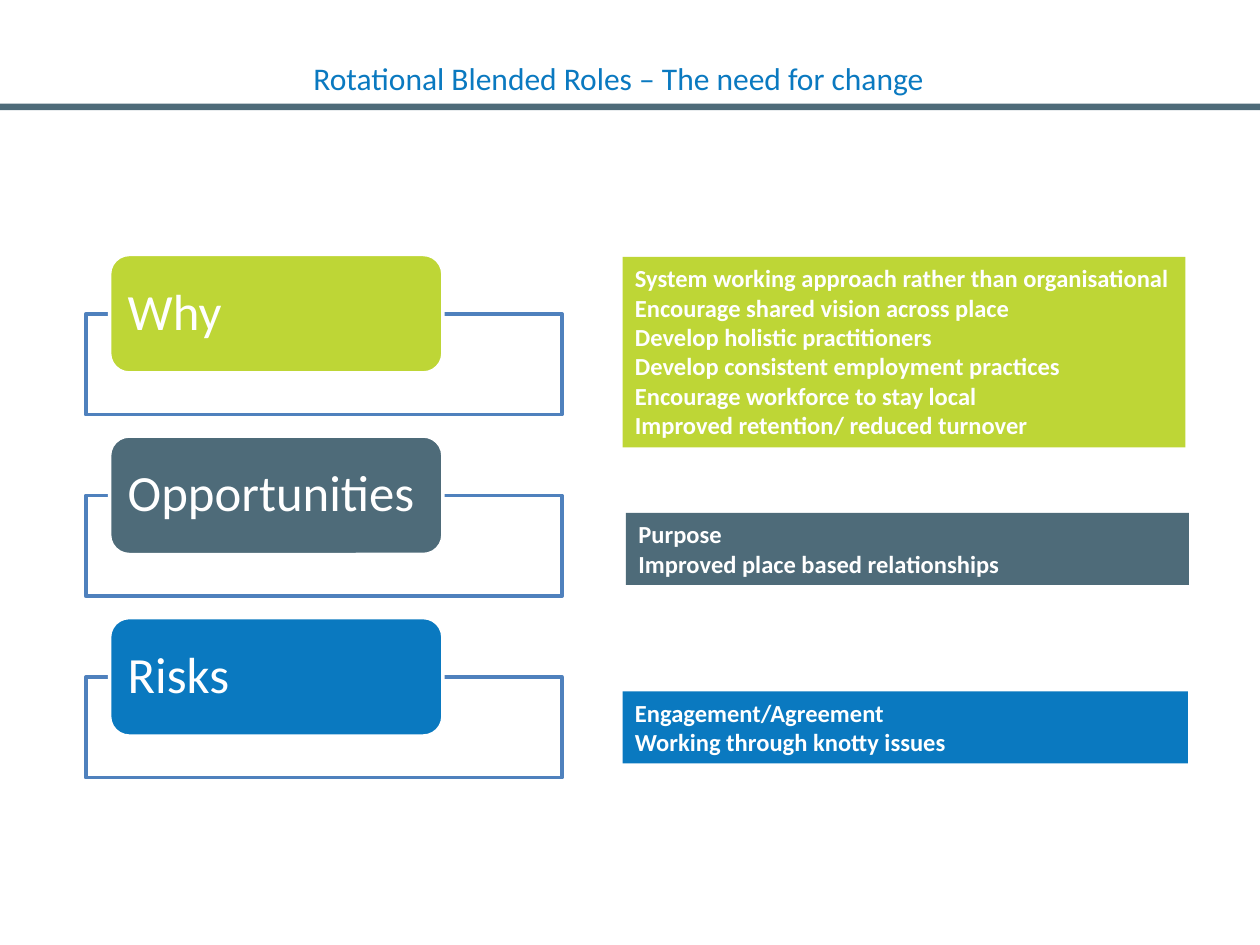
import pptx
import pptx.util
import pptx.dml.color
import pptx.enum.shapes
import pptx.enum.text
import pptx.oxml.ns
import lxml.etree

Cm = pptx.util.Cm
Pt = pptx.util.Pt
RGBColor = pptx.dml.color.RGBColor
Shape = pptx.enum.shapes.MSO_SHAPE
Align = pptx.enum.text.PP_ALIGN
Anchor = pptx.enum.text.MSO_ANCHOR

WHITE = RGBColor(0xFF, 0xFF, 0xFF)
LIME = RGBColor(0xBE, 0xD6, 0x36)
SLATE = RGBColor(0x4E, 0x6B, 0x79)
BLUE = RGBColor(0x0A, 0x79, 0xC0)
OUTLINE = RGBColor(0x4F, 0x81, 0xBD)

STAGES = [("Why", LIME), ("Opportunities", SLATE), ("Risks", BLUE)]
PANELS = [
    ((12.55, 5.18, 11.35, 3.84), LIME, Align.JUSTIFY, [
        "System working approach rather than organisational",
        "Encourage shared vision across place",
        "Develop holistic practitioners",
        "Develop consistent employment practices",
        "Encourage workforce to stay local",
        "Improved retention/ reduced turnover",
    ]),
    ((12.62, 10.34, 11.35, 1.45), SLATE, Align.LEFT, [
        "Purpose",
        "Improved place based relationships",
    ]),
    ((12.55, 13.94, 11.4, 1.45), BLUE, Align.LEFT, [
        "Engagement/Agreement",
        "Working through knotty issues",
    ]),
]


def add_block(page, kind, box, fill, line=None):
    block = page.shapes.add_shape(kind, *(Cm(length) for length in box))
    block.shadow.inherit = False
    block.fill.solid()
    block.fill.fore_color.rgb = fill
    if line is None:
        block.line.fill.background()
    else:
        block.line.color.rgb = line
        block.line.width = Pt(2)
    return block


def write_lines(frame, lines, size, color, align=Align.LEFT, bold=False):
    for index, line in enumerate(lines):
        para = frame.paragraphs[0] if index == 0 else frame.add_paragraph()
        para.text = line
        para.alignment = align
        para.font.name = "Calibri"
        para.font.size = Pt(size)
        para.font.bold = bold
        para.font.color.rgb = color


def add_header(page, left, top, width):
    add_block(page, Shape.RECTANGLE, (left, top + 1.02, width, 0.13), SLATE)
    title = page.shapes.add_textbox(Cm(left + 6.07), Cm(top), Cm(12.98), Cm(1.02))
    title.text_frame.word_wrap = False
    write_lines(title.text_frame, ["Rotational Blended Roles – The need for change"], 18, BLUE)


def add_panel(page, box, fill, align, lines):
    frame = add_block(page, Shape.RECTANGLE, box, fill).text_frame
    frame.word_wrap = True
    frame.vertical_anchor = Anchor.TOP
    write_lines(frame, lines, 14, WHITE, align, bold=True)


def add_stage(page, left, top, width, label, fill):
    tray = add_block(page, Shape.RECTANGLE, (left, top + 1.2, width, 2.03), WHITE, OUTLINE)
    tray_color = tray.fill._xPr.find(".//" + pptx.oxml.ns.qn("a:srgbClr"))
    lxml.etree.SubElement(tray_color, pptx.oxml.ns.qn("a:alpha"), val="90000")
    card = add_block(page, Shape.ROUNDED_RECTANGLE,
                     (left + 0.48, top, width * 0.7, 2.39), fill, WHITE)
    frame = card.text_frame
    frame.word_wrap = True
    frame.vertical_anchor = Anchor.MIDDLE
    frame.margin_left = frame.margin_right = Cm(0.25)
    frame.margin_top = frame.margin_bottom = 0
    write_lines(frame, [label], 29, WHITE)
    frame.paragraphs[0].line_spacing = 0.9


def main():
    deck = pptx.Presentation()
    deck.slide_width = Cm(25.4)
    deck.slide_height = Cm(19.05)
    page = deck.slides.add_slide(deck.slide_layouts[6])
    add_header(page, 0, 1.07, 25.4)
    for panel in PANELS:
        add_panel(page, *panel)
    for index, (label, fill) in enumerate(STAGES):
        add_stage(page, 1.73, 5.13 + index * 3.66, 9.6, label, fill)
    deck.save("out.pptx")


if __name__ == "__main__":
    main()
